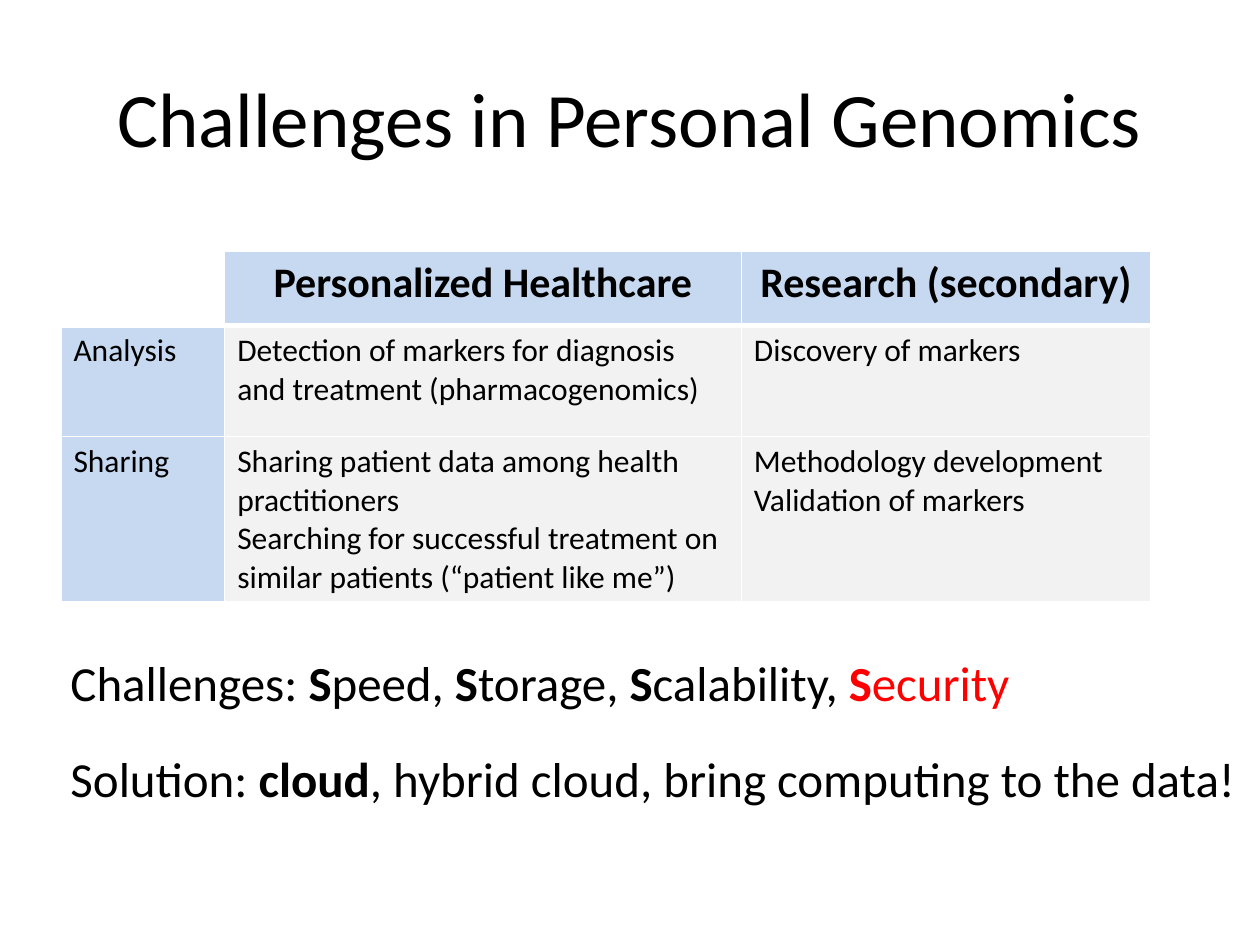
from lxml import etree
from pptx import Presentation
from pptx.dml.color import RGBColor
from pptx.enum.text import MSO_ANCHOR, PP_ALIGN
from pptx.oxml.ns import qn
from pptx.util import Pt

LEFT, CENTER = PP_ALIGN.LEFT, PP_ALIGN.CENTER
TOP, MIDDLE = MSO_ANCHOR.TOP, MSO_ANCHOR.MIDDLE
BLACK = RGBColor(0x00, 0x00, 0x00)
RED = RGBColor(0xFF, 0x00, 0x00)
BLUE = RGBColor(0xC6, 0xD9, 0xF1)
GREY = RGBColor(0xF2, 0xF2, 0xF2)
WHITE = RGBColor(0xFF, 0xFF, 0xFF)

COLUMNS = [93.6, 295.2, 234]
ROWS = [42.5, 63.4, 94.5]
CELLS = [
    [[], ["Personalized Healthcare"], ["Research (secondary)"]],
    [
        ["Analysis"],
        ["Detection of markers for diagnosis and treatment (pharmacogenomics)"],
        ["Discovery of markers"],
    ],
    [
        ["Sharing"],
        [
            "Sharing patient data among health practitioners",
            "Searching for successful treatment on similar patients (“patient like me”)",
        ],
        ["Methodology development", "Validation of markers"],
    ],
]
CHALLENGES = [
    ("Challenges: ", False, BLACK),
    ("S", True, BLACK), ("peed, ", False, BLACK),
    ("S", True, BLACK), ("torage, ", False, BLACK),
    ("S", True, BLACK), ("calability, ", False, BLACK),
    ("S", True, RED), ("ecurity", False, RED),
]
SOLUTION = [
    ("Solution: ", False, BLACK),
    ("cloud", True, BLACK),
    (", hybrid cloud, bring computing to the data!", False, BLACK),
]


class SlideBuilder:
    font = "Calibri"

    def __init__(self, s):
        self.s = s

    def run(self, p, text, size, bold=False, color=BLACK):
        r = p.add_run()
        r.text = text
        r.font.name = self.font
        r.font.size = Pt(size)
        r.font.bold = bold
        r.font.color.rgb = color

    def text(self, x, y, w, h, runs, size, align=LEFT, anchor=TOP, wrap=True):
        sp = self.s.shapes.add_textbox(Pt(x), Pt(y), Pt(w), Pt(h))
        tf = sp.text_frame
        tf.word_wrap = wrap
        tf.vertical_anchor = anchor
        p = tf.paragraphs[0]
        p.alignment = align
        for text, bold, color in runs:
            self.run(p, text, size, bold, color)

    def borders(self, cell, bottom):
        tcPr = cell._tc.get_or_add_tcPr()
        for side, width in (("L", 1), ("R", 1), ("T", 1), ("B", bottom)):
            ln = etree.SubElement(tcPr, qn(f"a:ln{side}"), w=str(Pt(width)))
            fill = etree.SubElement(ln, qn("a:solidFill"))
            etree.SubElement(fill, qn("a:srgbClr"), val=str(WHITE))

    def cell(self, cell, lines, header, fill):
        self.borders(cell, 3 if header else 1)
        if fill is None:
            cell.fill.background()
        else:
            cell.fill.solid()
            cell.fill.fore_color.rgb = fill
        tf = cell.text_frame
        for i, line in enumerate(lines):
            p = tf.add_paragraph() if i else tf.paragraphs[0]
            p.alignment = CENTER if header else LEFT
            self.run(p, line, 24 if header else 18, header)

    def table(self, x, y, widths, heights, rows):
        frame = self.s.shapes.add_table(
            len(heights), len(widths), Pt(x), Pt(y), Pt(sum(widths)), Pt(sum(heights))
        )
        table = frame.table
        table.first_row = table.horz_banding = False
        for column, width in zip(table.columns, widths):
            column.width = Pt(width)
        for i, (row, height) in enumerate(zip(table.rows, heights)):
            row.height = Pt(height)
            for j, lines in enumerate(rows[i]):
                fill = GREY if i and j else BLUE if lines else None
                self.cell(table.cell(i, j), lines, i == 0, fill)


def main():
    prs = Presentation()
    prs.slide_width, prs.slide_height = Pt(720), Pt(540)
    b = SlideBuilder(prs.slides.add_slide(prs.slide_layouts[6]))
    title = [("Challenges in Personal Genomics", False, BLACK)]
    b.text(36, 21.6, 648, 90, title, 44, CENTER, MIDDLE)
    b.table(34.8, 143.6, COLUMNS, ROWS, CELLS)
    b.text(33.2, 369.4, 579.6, 41.2, CHALLENGES, 28)
    b.text(33.2, 424.2, 687.6, 41.2, SOLUTION, 28, wrap=False)
    prs.save("out.pptx")


if __name__ == "__main__":
    main()
